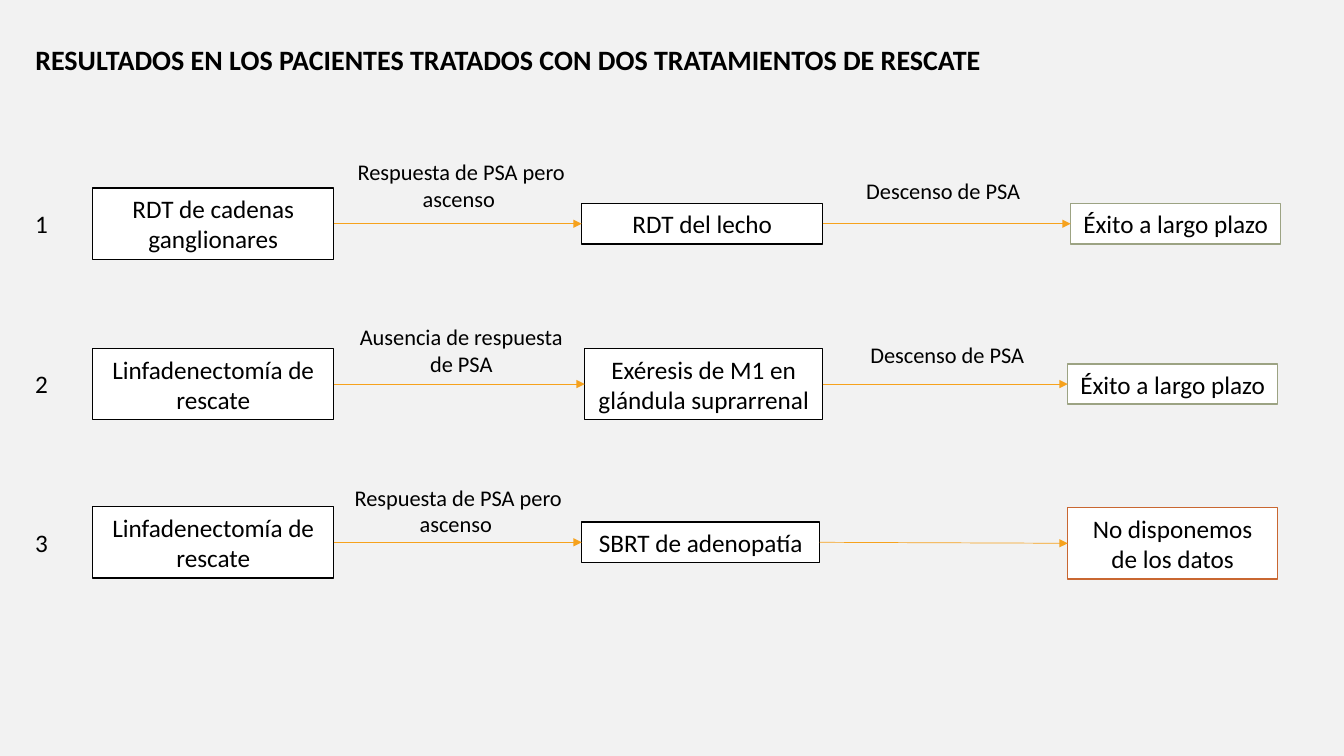
import pptx
import pptx.util
import pptx.dml.color
import pptx.enum.shapes
import pptx.enum.text
import pptx.oxml
import pptx.oxml.ns
from pptx.util import Inches

COLORS = {
    "background": "F2F2F2",
    "text": "000000",
    "box": "FFFFFF",
    "treatment": "000000",
    "success": "9CA383",
    "unknown": "C96731",
    "arrow": "F6A21D",
}
ALIGN = pptx.enum.text.PP_ALIGN
ANCHOR = pptx.enum.text.MSO_ANCHOR


def color(name):
    return pptx.dml.color.RGBColor.from_string(COLORS[name])


def write(shape, text, size, align=ALIGN.LEFT, anchor=ANCHOR.TOP, bold=False):
    frame = shape.text_frame
    frame.word_wrap = True
    frame.auto_size = pptx.enum.text.MSO_AUTO_SIZE.NONE
    frame.vertical_anchor = anchor
    paragraph = frame.paragraphs[0]
    paragraph.alignment = align
    run = paragraph.add_run()
    run.text = text
    run.font.name = "Calibri"
    run.font.size = pptx.util.Pt(size)
    run.font.bold = bold
    run.font.color.rgb = color("text")
    return paragraph


presentation = pptx.Presentation()
presentation.slide_width = Inches(13.33)
presentation.slide_height = Inches(7.5)
slide = presentation.slides.add_slide(presentation.slide_layouts[5])
slide.background.fill.solid()
slide.background.fill.fore_color.rgb = color("background")

title = slide.shapes.title
title.left, title.top = Inches(0.25), Inches(0.21)
title.width, title.height = Inches(13.08), Inches(0.55)
heading = write(title, "RESULTADOS EN LOS PACIENTES TRATADOS CON DOS TRATAMIENTOS DE RESCATE", 20, bold=True)
heading.line_spacing = 1.5

ONE_LINE, TWO_LINES = 0.4, 0.71
patients = [
    {
        "middle": 2.22,
        "boxes": [
            ("RDT de cadenas ganglionares", 0.92, 2.39, TWO_LINES, "treatment"),
            ("RDT del lecho", 5.77, 2.39, ONE_LINE, "treatment"),
            ("Éxito a largo plazo", 10.62, 2.08, ONE_LINE, "success"),
        ],
        "labels": [
            ("Respuesta de PSA pero ascenso ", 3.35, 1.52, 0.64),
            ("Descenso de PSA", 8.13, 1.71, 0.37),
        ],
    },
    {
        "middle": 3.81,
        "boxes": [
            ("Linfadenectomía de rescate", 0.92, 2.39, TWO_LINES, "treatment"),
            ("Exéresis de M1 en glándula suprarrenal", 5.8, 2.36, TWO_LINES, "treatment"),
            ("Éxito a largo plazo", 10.59, 2.08, ONE_LINE, "success"),
        ],
        "labels": [
            ("Ausencia de respuesta de PSA", 3.35, 3.16, 0.64),
            ("Descenso de PSA", 8.17, 3.34, 0.37),
        ],
    },
    {
        "middle": 5.38,
        "boxes": [
            ("Linfadenectomía de rescate", 0.92, 2.39, TWO_LINES, "treatment"),
            ("SBRT de adenopatía", 5.77, 2.36, ONE_LINE, "treatment"),
            ("No disponemos de los datos", 10.59, 2.08, TWO_LINES, "unknown"),
        ],
        "labels": [("Respuesta de PSA pero ascenso ", 3.32, 4.75, 0.64)],
    },
]

for number, patient in enumerate(patients, start=1):
    middle = patient["middle"]
    number_box = slide.shapes.add_textbox(
        Inches(0.25), Inches(middle - ONE_LINE / 2), Inches(0.56), Inches(ONE_LINE))
    write(number_box, str(number), 18)

    boxes = []
    for text, left, width, height, outline in patient["boxes"]:
        center = middle + 0.01 if outline == "unknown" else middle
        box = slide.shapes.add_shape(
            pptx.enum.shapes.MSO_SHAPE.RECTANGLE,
            Inches(left), Inches(center - height / 2), Inches(width), Inches(height))
        box.shadow.inherit = False
        box.fill.solid()
        box.fill.fore_color.rgb = color("box")
        box.line.color.rgb = color(outline)
        box.line.width = pptx.util.Pt(1)
        write(box, text, 18, ALIGN.CENTER, ANCHOR.MIDDLE)
        boxes.append(box)

    for start, end in zip(boxes, boxes[1:]):
        arrow = slide.shapes.add_connector(
            pptx.enum.shapes.MSO_CONNECTOR.STRAIGHT, 0, 0, 0, 0)
        arrow.begin_connect(start, 3)
        arrow.end_connect(end, 1)
        arrow.line.color.rgb = color("arrow")
        arrow.line.width = pptx.util.Pt(0.5)
        head = pptx.oxml.parse_xml(
            f'<a:tailEnd {pptx.oxml.ns.nsdecls("a")} type="triangle"/>')
        arrow.line._get_or_add_ln().append(head)
        arrow._element.spPr.append(
            pptx.oxml.parse_xml(f'<a:effectLst {pptx.oxml.ns.nsdecls("a")}/>'))

    for text, left, top, height in patient["labels"]:
        label = slide.shapes.add_textbox(
            Inches(left), Inches(top), Inches(2.45), Inches(height))
        write(label, text, 16, ALIGN.CENTER)

presentation.save("out.pptx")
